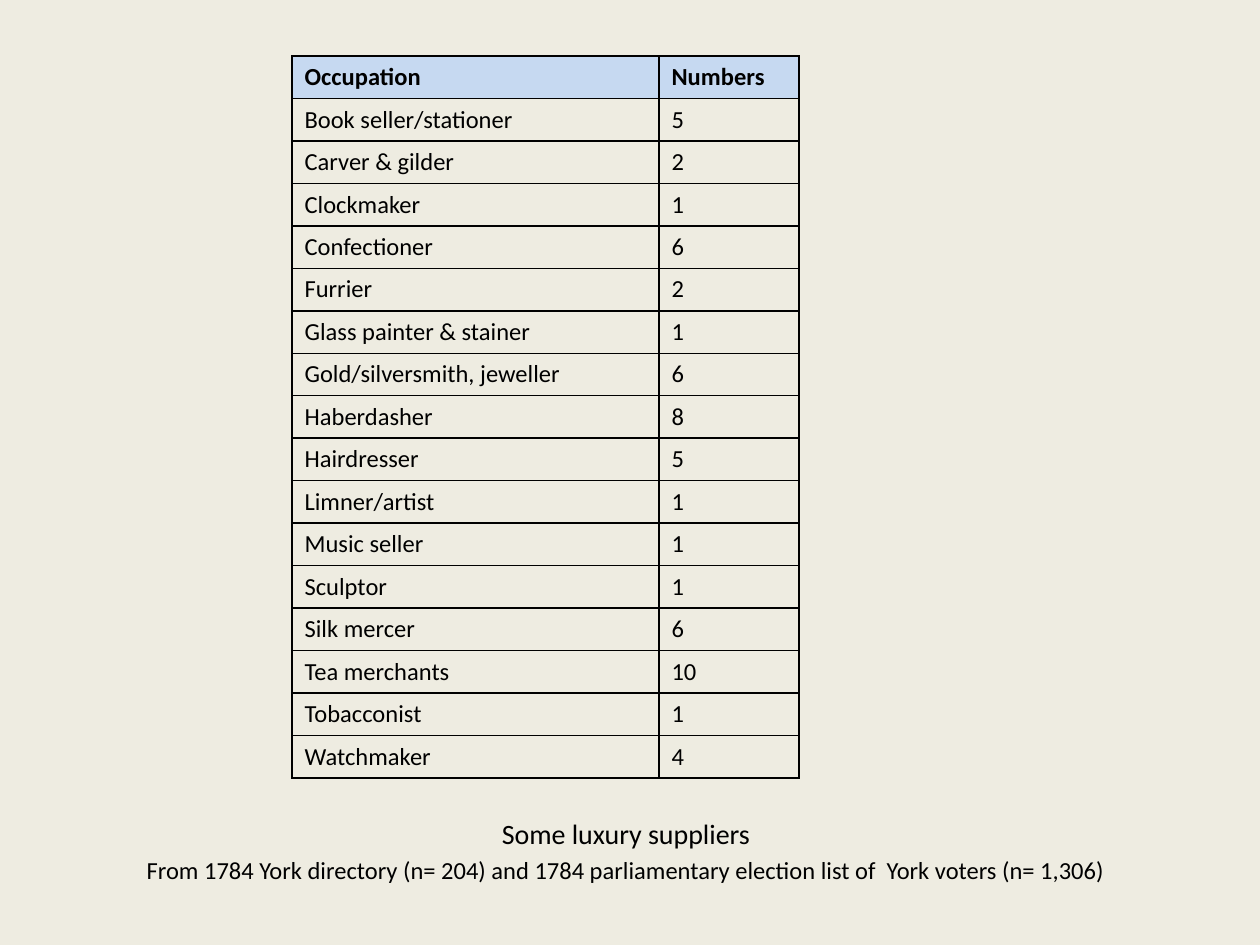
from lxml import etree
from pptx import Presentation
from pptx import util as u
from pptx.dml.color import RGBColor
from pptx.enum import text
from pptx.oxml import ns

PX = u.Inches(1) // 126
FONT = "Calibri"
CREAM = RGBColor(0xEE, 0xEC, 0xE1)
PALE_BLUE = RGBColor(0xC6, 0xD9, 0xF1)
BLACK = RGBColor(0, 0, 0)

SUPPLIERS = [
    ("Occupation", "Numbers"),
    ("Book seller/stationer", 5),
    ("Carver & gilder", 2),
    ("Clockmaker", 1),
    ("Confectioner", 6),
    ("Furrier", 2),
    ("Glass painter & stainer", 1),
    ("Gold/silversmith, jeweller", 6),
    ("Haberdasher", 8),
    ("Hairdresser", 5),
    ("Limner/artist", 1),
    ("Music seller", 1),
    ("Sculptor", 1),
    ("Silk mercer", 6),
    ("Tea merchants", 10),
    ("Tobacconist", 1),
    ("Watchmaker", 4),
]
CAPTION = [
    ("Some luxury suppliers", 16),
    ("From 1784 York directory (n= 204) and 1784 parliamentary election list of  York voters (n= 1,306)", 14),
]


class SlideBuilder:
    def __init__(self, deck, layout):
        self.page = deck.slides.add_slide(layout)
        self.page.background.fill.solid()
        self.page.background.fill.fore_color.rgb = CREAM

    def style(self, para, size, bold=False):
        for span in para.runs:
            span.font.name = FONT
            span.font.size = u.Pt(size)
            span.font.bold = bold
            span.font.color.rgb = BLACK

    def border(self, cell):
        properties = cell._tc.get_or_add_tcPr()
        for side in ("lnL", "lnR", "lnT", "lnB"):
            line = etree.SubElement(properties, ns.qn(f"a:{side}"), w=str(u.Pt(1)))
            fill = etree.SubElement(line, ns.qn("a:solidFill"))
            etree.SubElement(fill, ns.qn("a:srgbClr"), val=str(BLACK))

    def table(self, rows, left, top, widths, row_height):
        frame = self.page.shapes.add_table(
            len(rows), len(widths), left * PX, top * PX,
            sum(widths) * PX, len(rows) * row_height * PX)
        table = frame.table
        table.first_row = table.horz_banding = False
        for column, width in zip(table.columns, widths):
            column.width = width * PX
        for row_index, values in enumerate(rows):
            table.rows[row_index].height = row_height * PX
            is_header = row_index == 0
            for column_index, value in enumerate(values):
                cell = table.cell(row_index, column_index)
                cell.text_frame.text = str(value)
                self.style(cell.text_frame.paragraphs[0], 14, is_header)
                self.border(cell)
                if is_header:
                    cell.fill.solid()
                    cell.fill.fore_color.rgb = PALE_BLUE
                else:
                    cell.fill.background()

    def caption(self, lines, left, top, width, height):
        title = self.page.shapes.title
        title.element.getparent().remove(title.element)
        box = self.page.placeholders[1]
        box.left, box.top, box.width, box.height = (
            value * PX for value in (left, top, width, height))
        frame = box.text_frame
        frame.word_wrap = True
        frame.auto_size = text.MSO_AUTO_SIZE.NONE
        frame.vertical_anchor = text.MSO_ANCHOR.TOP
        frame.text = "\n".join(line for line, _ in lines)
        for para, (_, size) in zip(frame.paragraphs, lines):
            para.alignment = text.PP_ALIGN.CENTER
            para.space_before = u.Pt(size * 0.2)
            self.style(para, size)


def main():
    deck = Presentation()
    deck.slide_width, deck.slide_height = u.Inches(10), u.Inches(7.5)
    builder = SlideBuilder(deck, deck.slide_layouts.get_by_name("Section Header"))
    builder.caption(CAPTION, 115, 810, 1022, 79)
    builder.table(SUPPLIERS, 292, 56, (367, 140), 42)
    deck.save("out.pptx")


if __name__ == "__main__":
    main()
